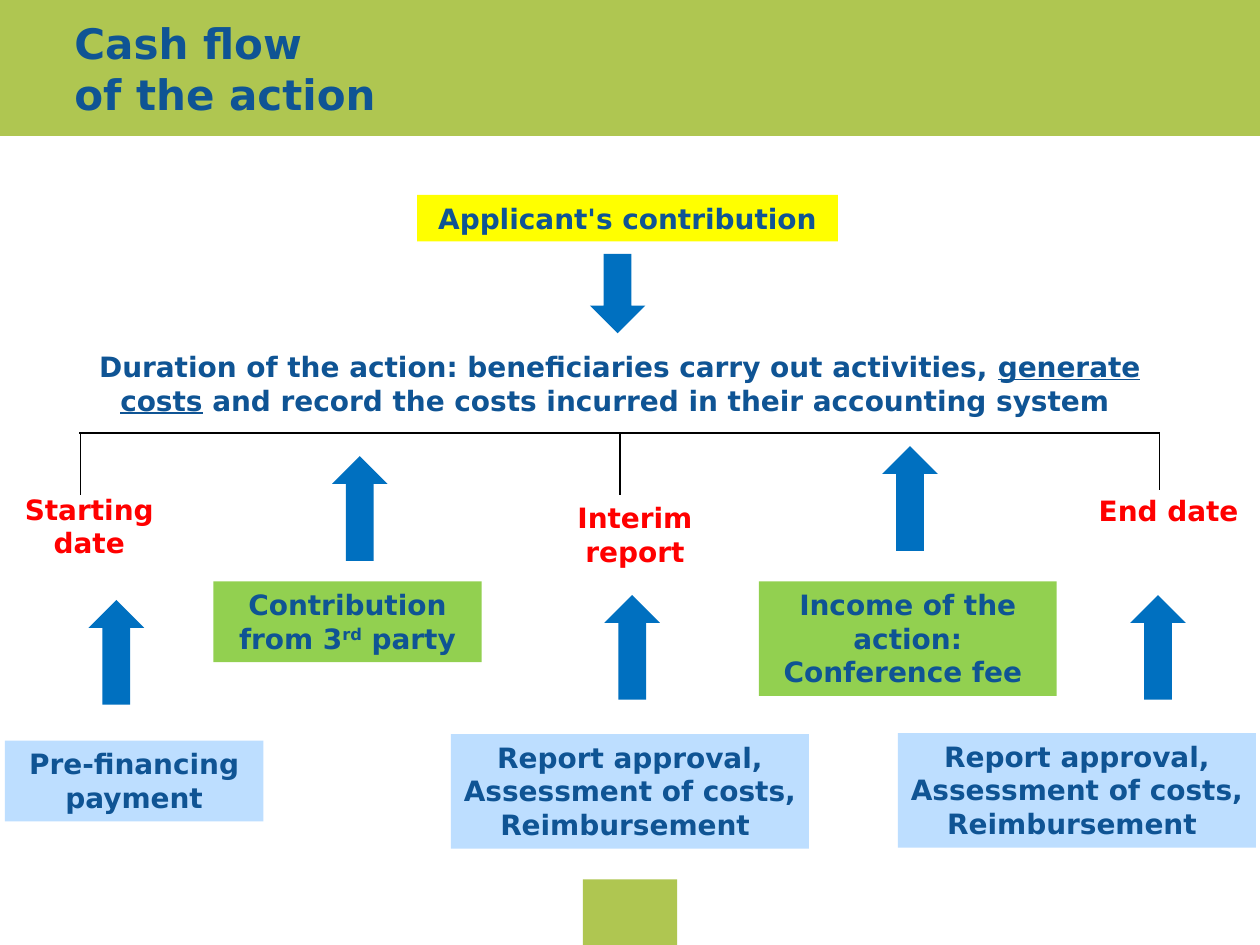
"""Build the slide on the cash flow of an action."""
from pptx import Presentation
from pptx.dml.color import RGBColor
from pptx.enum.shapes import MSO_CONNECTOR, MSO_SHAPE
from pptx.enum.text import MSO_ANCHOR, PP_ALIGN
from pptx.oxml.ns import qn
from pptx.util import Cm, Pt
from lxml.etree import SubElement

BLACK = RGBColor(0x00, 0x00, 0x00)
WHITE = RGBColor(0xFF, 0xFF, 0xFF)
NAVY = RGBColor(0x0F, 0x54, 0x94)
RED = RGBColor(0xFF, 0x00, 0x00)
BLUE = RGBColor(0x00, 0x70, 0xC0)
PALE_BLUE = RGBColor(0xBD, 0xDE, 0xFF)
GREEN = RGBColor(0x92, 0xD0, 0x50)
OLIVE = RGBColor(0xAF, 0xC6, 0x51)
YELLOW = RGBColor(0xFF, 0xFF, 0x00)


class SlideBuilder:
    """Hold the text style and the current slide."""

    font_name = "DejaVu Sans"
    text_size = 16
    title_size = 24
    arrow_width = 1.12

    def __init__(self, slide):
        self.slide = slide

    def format_text(self, frame, size, color, alignment):
        for paragraph in frame.paragraphs:
            paragraph.alignment = alignment
            for run in paragraph.runs:
                font = run.font
                font.name = self.font_name
                font.size = Pt(size)
                font.bold = True
                font.color.rgb = color

    def title(self, text, left, top, width, height, indent):
        shape = self.slide.shapes.title
        shape.left, shape.top = Cm(left), Cm(top)
        shape.width, shape.height = Cm(width), Cm(height)
        frame = shape.text_frame
        frame.text = text
        frame.vertical_anchor = MSO_ANCHOR.BOTTOM
        frame.margin_left = Cm(indent)
        frame.margin_right = frame.margin_top = frame.margin_bottom = 0
        self.format_text(frame, self.title_size, NAVY, PP_ALIGN.LEFT)

    def shape(self, kind, left, top, width, height, fill):
        shape = self.slide.shapes.add_shape(
            kind, Cm(left), Cm(top), Cm(width), Cm(height))
        shape.shadow.inherit = False
        shape.fill.solid()
        shape.fill.fore_color.rgb = fill
        shape.line.fill.background()
        return shape

    def box(self, pieces, left, top, width, height, fill):
        shape = self.shape(MSO_SHAPE.RECTANGLE, left, top, width, height, fill)
        frame = shape.text_frame
        frame.word_wrap = True
        frame.vertical_anchor = MSO_ANCHOR.TOP
        frame.text = pieces[0]
        for piece in pieces[1:]:
            frame.paragraphs[0].add_run().text = piece
        self.format_text(frame, self.text_size, NAVY, PP_ALIGN.CENTER)
        return frame

    def milestone(self, text, left, top, height, alignment=PP_ALIGN.CENTER):
        frame = self.slide.shapes.add_textbox(
            Cm(left), Cm(top), Cm(3.4), Cm(height)).text_frame
        frame.word_wrap = True
        frame.text = text
        self.format_text(frame, self.text_size, RED, alignment)

    def arrow(self, left, top, length=2.11, rotation=270):
        shape = self.shape(
            MSO_SHAPE.RIGHT_ARROW, left, top, length, self.arrow_width, BLUE)
        shape.rotation = rotation

    def line(self, start_x, start_y, end_x, end_y):
        connector = self.slide.shapes.add_connector(
            MSO_CONNECTOR.STRAIGHT, Cm(start_x), Cm(start_y), Cm(end_x), Cm(end_y))
        connector.line.color.rgb = BLACK
        connector.line.width = Pt(0.75)
        SubElement(connector._element.spPr, qn("a:effectLst"))


def main():
    presentation = Presentation()
    presentation.slide_width, presentation.slide_height = Cm(25.4), Cm(19.05)
    slide = presentation.slides.add_slide(presentation.slide_layouts[5])
    builder = SlideBuilder(slide)

    band = builder.shape(MSO_SHAPE.RECTANGLE, 0, 0, 25.4, 2.74, OLIVE)
    slide.shapes.title._element.addprevious(band._element)
    builder.title("Cash flow\nof the action", 0.51, -0.28, 9.6, 2.67, indent=0.99)
    builder.shape(MSO_SHAPE.RECTANGLE, 11.75, 17.73, 1.9, 1.32, OLIVE)

    builder.box(["Applicant's contribution"], 8.41, 3.93, 8.48, 0.94, YELLOW)
    builder.arrow(11.65, 5.36, length=1.6, rotation=90)
    duration = builder.box(
        ["Duration of the action: beneficiaries carry out activities, ",
         "generate costs",
         " and record the costs incurred in their accounting system "],
        1.6, 6.93, 21.79, 1.63, WHITE)
    duration.paragraphs[0].runs[1].font.underline = True

    builder.line(1.6, 8.73, 23.39, 8.73)
    for tick_x, tick_end in [(1.62, 9.98), (12.5, 9.98), (23.37, 9.88)]:
        builder.line(tick_x, 8.73, tick_x, tick_end)
    builder.milestone("Starting date", 0.1, 9.8, 1.63)
    builder.milestone("Interim report", 11.1, 9.97, 1.63)
    builder.milestone("End date", 21.9, 9.83, 0.94, PP_ALIGN.LEFT)

    for left, top in [(6.2, 9.69), (17.29, 9.49),
                      (1.29, 12.59), (11.69, 12.49), (22.29, 12.49)]:
        builder.arrow(left, top)

    contribution = builder.box(
        ["Contribution from 3", "rd", " party"], 4.3, 11.72, 5.41, 1.63, GREEN)
    ordinal = contribution.paragraphs[0].runs[1]
    ordinal._r.get_or_add_rPr().set("baseline", "30000")
    builder.box(["Income of the action: Conference fee "],
                15.3, 11.72, 6, 2.31, GREEN)

    builder.box(["Pre-financing payment"], 0.1, 14.93, 5.21, 1.63, PALE_BLUE)
    for left, top in [(9.09, 14.8), (18.1, 14.78)]:
        builder.box(["Report approval,\nAssessment of costs, Reimbursement "],
                    left, top, 7.22, 2.31, PALE_BLUE)

    presentation.save("out.pptx")


if __name__ == "__main__":
    main()
